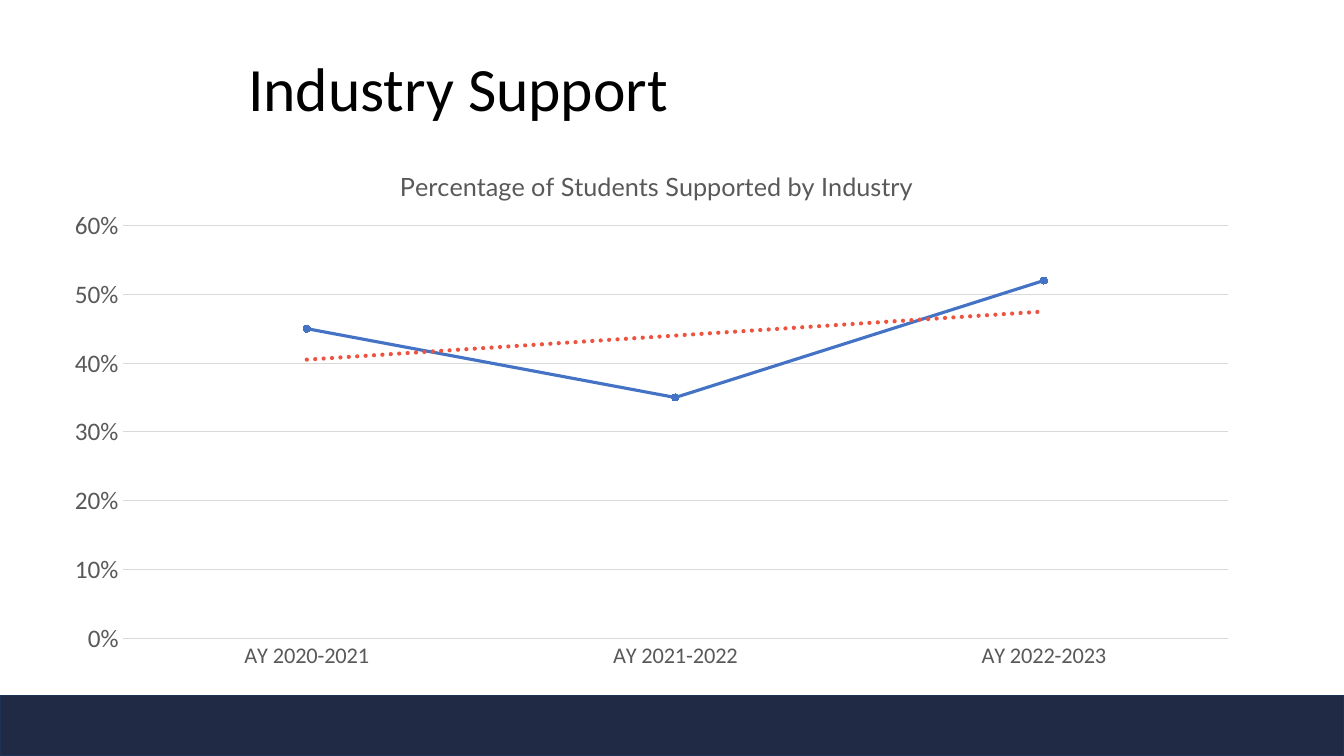
from dataclasses import dataclass

from lxml.etree import _Element
from pptx import Presentation
from pptx.chart.chart import Chart
from pptx.chart.data import CategoryChartData
from pptx.dml.color import RGBColor
from pptx.enum.chart import XL_CHART_TYPE, XL_MARKER_STYLE, XL_TICK_MARK
from pptx.enum.shapes import MSO_SHAPE
from pptx.enum.text import MSO_ANCHOR, PP_ALIGN
from pptx.oxml import parse_xml
from pptx.oxml.ns import nsdecls
from pptx.util import Inches, Pt

WIDTH, HEIGHT = Inches(13.33), Inches(7.5)
COLORS = {
    "navy": "202A44", "edge": "1E3256", "black": "000000", "gray": "595959",
    "grid": "D9D9D9", "blue": "4472C4", "trend": "EE5340",
}


@dataclass(frozen=True)
class Region:
    """A rectangle in shares of the slide's width and height."""
    left: float
    top: float
    width: float
    height: float

    def lengths(self) -> tuple[int, int, int, int]:
        return (round(self.left * WIDTH), round(self.top * HEIGHT),
                round(self.width * WIDTH), round(self.height * HEIGHT))


@dataclass(frozen=True)
class AxisStyle:
    size: int
    line: str | None


BAND = Region(0, 0.92, 1, 0.08)
TITLE = Region(2.36 / 13.33, 0.4 / 7.5, 10.06 / 13.33, 1.01 / 7.5)
CHART = Region(0.5 / 13.33, 1.41 / 7.5, 11.92 / 13.33, 5.34 / 7.5)
SUPPORT = {"AY 2020-2021": 0.45, "AY 2021-2022": 0.35, "AY 2022-2023": 0.52}


def color(name: str) -> RGBColor:
    return RGBColor.from_string(COLORS[name])


def style_font(font, name: str, size: int, color_name: str) -> None:
    font.name, font.size, font.bold = name, Pt(size), False
    font.color.rgb = color(color_name)


def style_line(line, color_name: str, width: float) -> None:
    line.color.rgb = color(color_name)
    line.width = Pt(width)


def style_axis(axis, style: AxisStyle) -> None:
    axis.major_tick_mark = axis.minor_tick_mark = XL_TICK_MARK.NONE
    style_font(axis.tick_labels.font, "Calibri", style.size, "gray")
    if style.line:
        style_line(axis.format.line, style.line, 0.75)
    else:
        axis.format.line.fill.background()


def style_marker(marker, color_name: str) -> None:
    marker.style, marker.size = XL_MARKER_STYLE.CIRCLE, 5
    marker.format.fill.solid()
    marker.format.fill.fore_color.rgb = color(color_name)
    style_line(marker.format.line, color_name, 0.75)


def manual_layout(inner: str, **shares: float) -> _Element:
    modes = "".join(f'<c:{axis}Mode val="edge"/>' for axis in "xy")
    values = "".join(f'<c:{key} val="{share}"/>' for key, share in shares.items())
    return parse_xml(f'<c:layout {nsdecls("c")}><c:manualLayout>{inner}{modes}{values}'
                     '</c:manualLayout></c:layout>')


def place_chart_parts(chart: Chart) -> None:
    plot_area = chart.plots[0]._element.getparent()
    for layout in plot_area.findall("{*}layout"):
        plot_area.remove(layout)
    plot_area.insert(0, manual_layout('<c:layoutTarget val="inner"/>',
                                      x=0.06, y=0.155, w=0.92, h=0.767))
    title = chart.chart_title._element
    for layout in title.findall("{*}layout"):
        title.remove(layout)
    title.find("{*}tx").addnext(manual_layout("", x=0.287, y=0.04))


def add_trend(series) -> None:
    trend = parse_xml(
        f'<c:trendline {nsdecls("c", "a")}><c:spPr><a:ln w="{Pt(3)}" cap="rnd">'
        f'<a:solidFill><a:srgbClr val="{COLORS["trend"]}"/></a:solidFill>'
        '<a:prstDash val="sysDot"/></a:ln></c:spPr><c:trendlineType val="linear"/>'
        '<c:dispRSqr val="0"/><c:dispEq val="0"/></c:trendline>')
    series._element.find("{*}cat").addprevious(trend)


def add_support_chart(page) -> None:
    data = CategoryChartData(number_format="0%")
    data.categories = list(SUPPORT)
    data.add_series("Series 1", list(SUPPORT.values()))
    chart = page.shapes.add_chart(XL_CHART_TYPE.LINE_MARKERS, *CHART.lengths(), data).chart
    style_font(chart.font, "Calibri", 10, "black")
    chart.has_legend = False
    chart.plots[0].vary_by_categories = False

    # Chart title
    para = chart.chart_title.text_frame.paragraphs[0]
    para.text = "Percentage of Students Supported by Industry"
    style_font(para.font, "Lato", 18, "gray")
    style_font(para.runs[0].font, "Lato", 18, "gray")

    # Axes
    style_axis(chart.category_axis, AxisStyle(16, "grid"))
    values = chart.value_axis
    style_axis(values, AxisStyle(18, None))
    values.minimum_scale, values.maximum_scale, values.major_unit = 0, 0.6, 0.1
    values.tick_labels.number_format = "0%"
    values.tick_labels.number_format_is_linked = False
    values.has_major_gridlines = True
    style_line(values.major_gridlines.format.line, "grid", 0.75)

    # Line, markers and trend
    series = chart.plots[0].series[0]
    series.smooth = False
    style_line(series.format.line, "blue", 2.25)
    style_marker(series.marker, "navy")
    first_year = series.points[0]
    style_marker(first_year.marker, "blue")
    style_line(first_year.format.line, "blue", 2.25)
    add_trend(series)
    place_chart_parts(chart)


def add_band(page) -> None:
    band = page.shapes.add_shape(MSO_SHAPE.RECTANGLE, *BAND.lengths())
    band.shadow.inherit = False
    band.fill.solid()
    band.fill.fore_color.rgb = color("navy")
    style_line(band.line, "edge", 1)


def set_title(page) -> None:
    title = page.shapes.title
    title.left, title.top, title.width, title.height = TITLE.lengths()
    frame = title.text_frame
    frame.text = "Industry Support"
    frame.vertical_anchor = MSO_ANCHOR.MIDDLE
    para = frame.paragraphs[0]
    para.alignment, para.line_spacing = PP_ALIGN.LEFT, 0.9
    style_font(para.runs[0].font, "Calibri", 44, "black")


def main() -> None:
    deck = Presentation()
    deck.slide_width, deck.slide_height = WIDTH, HEIGHT
    page = deck.slides.add_slide(deck.slide_layouts[5])
    add_band(page)
    set_title(page)
    add_support_chart(page)
    deck.save("out.pptx")


if __name__ == "__main__":
    main()
